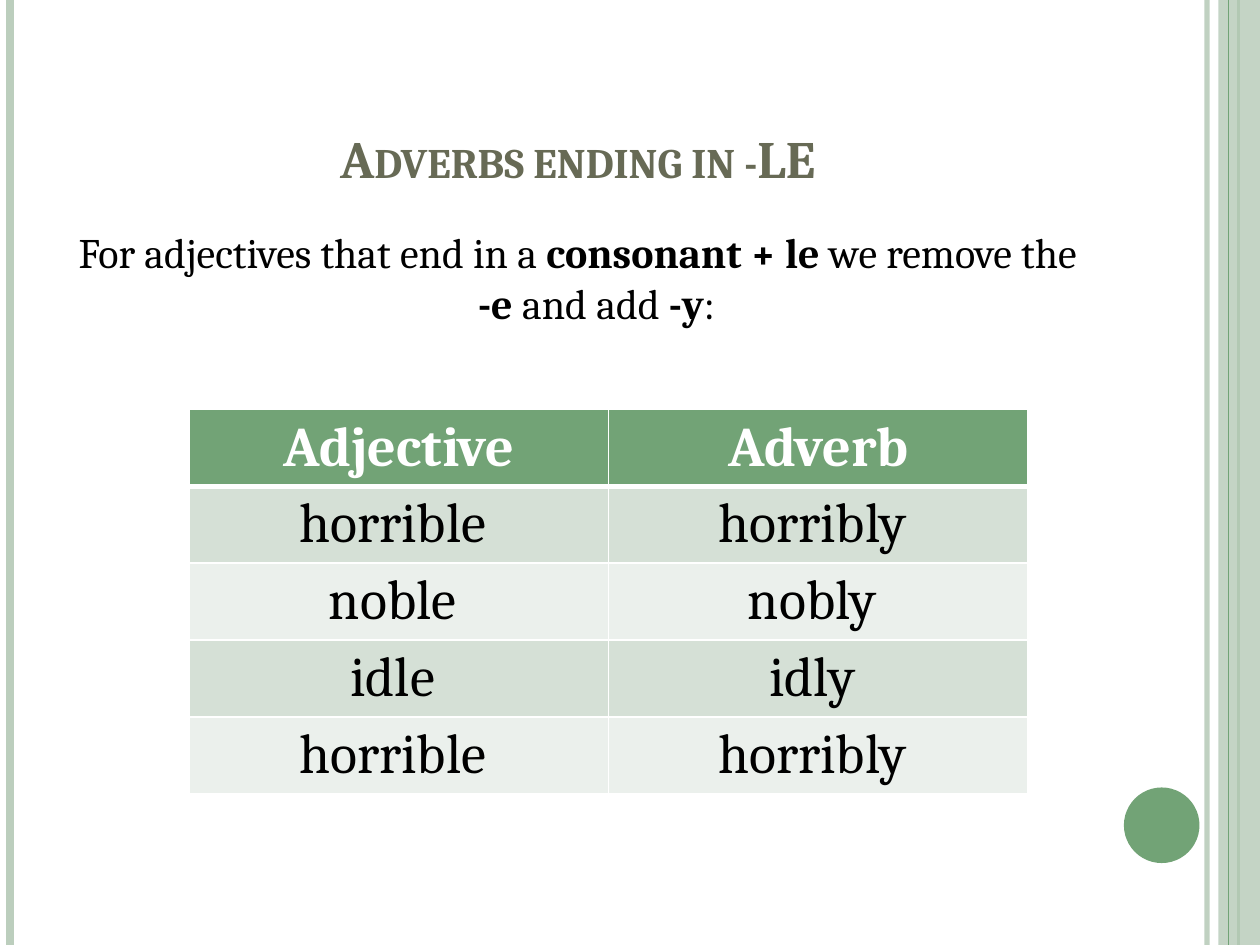
"""Build a slide on adverbs formed from adjectives ending in -le."""
from lxml import etree
from pptx import Presentation
from pptx.dml.color import RGBColor
from pptx.enum import shapes, text
from pptx.oxml import ns
from pptx.util import Inches, Pt

GREEN = RGBColor(0x72, 0xA3, 0x76)
PALE = RGBColor(0xBC, 0xCE, 0xBD)
OLIVE = RGBColor(0x67, 0x6A, 0x55)
BAND = RGBColor(0xD5, 0xE0, 0xD6)
LIGHT = RGBColor(0xEB, 0xF0, 0xEC)
WHITE = RGBColor(0xFF, 0xFF, 0xFF)
BLACK = RGBColor(0, 0, 0)


class Deck:
    """Hold the style and the current slide."""

    font = "Cambria"

    def __init__(self):
        self.prs = Presentation()
        self.prs.slide_width, self.prs.slide_height = Inches(10), Inches(7.5)
        self.slide = self.prs.slides.add_slide(self.prs.slide_layouts[5])
        self.items = self.slide.shapes

    def fade(self, part, alpha):
        color = next(part.iter(ns.qn("a:srgbClr")))
        etree.SubElement(color, ns.qn("a:alpha"), val=str(alpha * 1000))

    def rule(self, x, color, width, alpha=100):
        line = self.items.add_connector(
            shapes.MSO_CONNECTOR.STRAIGHT, Inches(x), 0, Inches(x), Inches(7.5))
        line.line.color.rgb = color
        line.line.width = Pt(width)
        props = line._element.spPr
        etree.SubElement(props, ns.qn("a:effectLst"))
        if alpha < 100:
            self.fade(props, alpha)

    def shape(self, kind, box, color, alpha=100):
        item = self.items.add_shape(kind, *map(Inches, box))
        item.shadow.inherit = False
        item.fill.solid()
        item.fill.fore_color.rgb = color
        item.line.fill.background()
        if alpha < 100:
            self.fade(item._element.spPr, alpha)

    def run(self, para, words, size, color, bold=False):
        para.alignment = text.PP_ALIGN.CENTER
        run = para.add_run()
        run.text = words
        font = run.font
        font.name, font.size, font.bold = self.font, Pt(size), bold
        font.color.rgb = color
        return run

    def title(self, box, words):
        item = self.items.title
        item.left, item.top, item.width, item.height = map(Inches, box)
        frame = item.text_frame
        frame.auto_size = text.MSO_AUTO_SIZE.NONE
        frame.vertical_anchor = text.MSO_ANCHOR.BOTTOM
        run = self.run(frame.paragraphs[0], words, 30, OLIVE, True)
        run._r.get_or_add_rPr().set("cap", "small")

    def body(self, box, parts):
        frame = self.items.add_textbox(*map(Inches, box)).text_frame
        frame.word_wrap = True
        para = frame.paragraphs[0]
        para.space_before = Pt(6)
        props = para._p.get_or_add_pPr()
        props.set("marL", str(Inches(0.3)))
        props.set("indent", str(Inches(-0.3)))
        for words, bold in parts:
            self.run(para, words, 24, BLACK, bold)

    def border(self, cell, head):
        props = cell._tc.get_or_add_tcPr()
        for side in "LRTB":
            width = 3 if head and side == "B" else 1
            line = etree.SubElement(props, ns.qn(f"a:ln{side}"), w=str(Pt(width)))
            fill = etree.SubElement(line, ns.qn("a:solidFill"))
            etree.SubElement(fill, ns.qn("a:srgbClr"), val=str(WHITE))

    def table(self, box, rows):
        grid = self.items.add_table(len(rows), len(rows[0]), *map(Inches, box)).table
        for r, row in enumerate(rows):
            for c, words in enumerate(row):
                cell, head = grid.cell(r, c), r == 0
                self.border(cell, head)
                cell.fill.solid()
                cell.fill.fore_color.rgb = GREEN if head else BAND if r % 2 else LIGHT
                cell.margin_top = cell.margin_bottom = Inches(0.03)
                cell.vertical_anchor = text.MSO_ANCHOR.MIDDLE
                self.run(cell.text_frame.paragraphs[0], words, 32,
                         WHITE if head else BLACK, head)


def main():
    deck = Deck()
    deck.rule(9.58, PALE, 3, 93)
    deck.rule(0.08, PALE, 4.5)
    deck.rule(9.83, GREEN, 1.5)
    deck.shape(shapes.MSO_SHAPE.RECTANGLE, (9.67, 0, 0.33, 7.5), PALE, 87)
    deck.rule(9.75, GREEN, 0.75)
    deck.shape(shapes.MSO_SHAPE.OVAL, (8.92, 6.25, 0.6, 0.6), GREEN)
    deck.title((0.5, 0.3, 8.17, 1.25), "Adverbs ending in -LE")
    deck.body((0.5, 1.75, 8.17, 5.33), [
        ("For adjectives that end in a ", False), ("consonant + le", True),
        (" we remove the ", False), ("-e", True), (" and add ", False),
        ("-y", True), (":", False)])
    deck.table((1.5, 3.25, 6.66, 3.05), [
        ("Adjective", "Adverb"), ("horrible ", "horribly "), ("noble ", "nobly "),
        ("idle ", "idly "), ("horrible ", "horribly ")])
    deck.prs.save("out.pptx")


if __name__ == "__main__":
    main()
